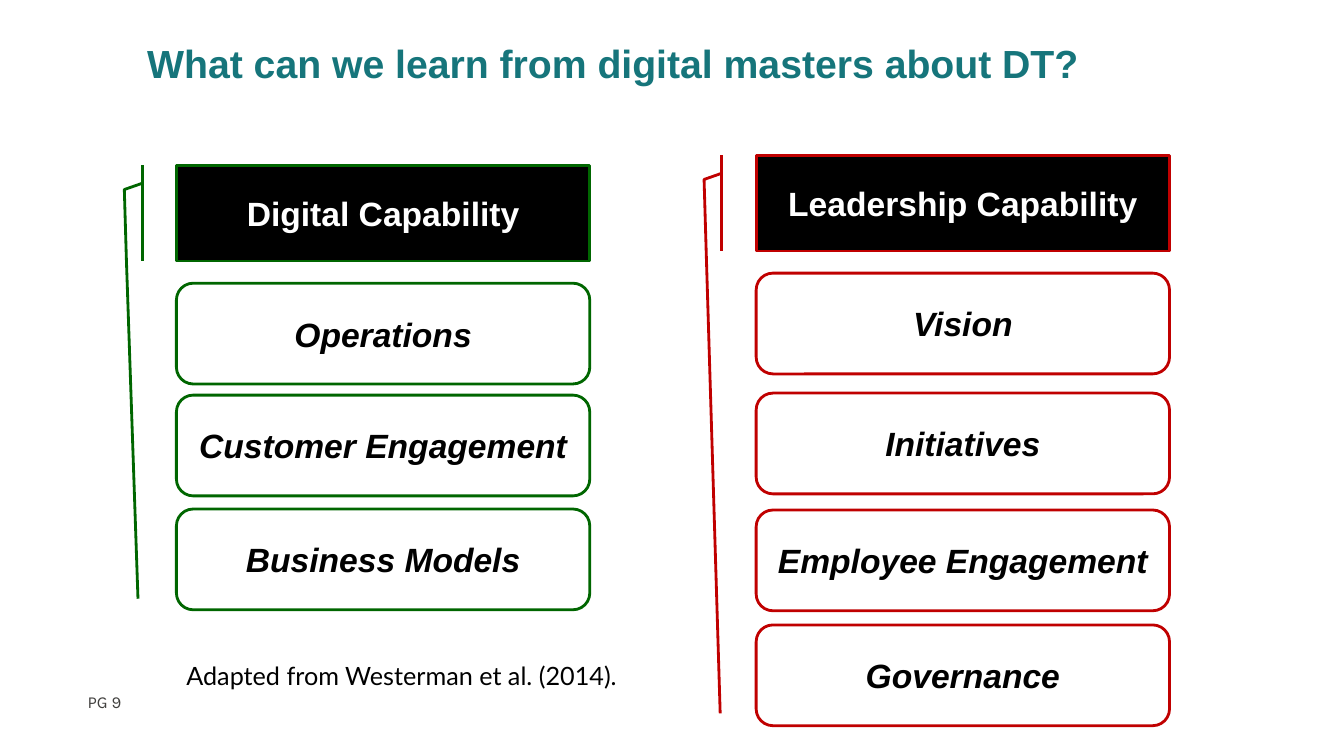
import pptx
import pptx.util
import pptx.dml.color
import pptx.enum.shapes
import pptx.enum.text

PX = 9144
COLOURS = {"teal": "16757B", "green": "006600", "red": "C00000",
           "black": "000000", "white": "FFFFFF", "grey": "41403E"}
SHAPES = pptx.enum.shapes.MSO_SHAPE
ALIGN = pptx.enum.text.PP_ALIGN
ANCHOR = pptx.enum.text.MSO_ANCHOR


def rgb(name):
    return pptx.dml.color.RGBColor.from_string(COLOURS[name])


def write(box, text, colour, align, anchor, formats):
    frame = box.text_frame
    frame.word_wrap = True
    frame.vertical_anchor = anchor
    para = frame.paragraphs[0]
    para.alignment = align
    span = para.add_run()
    span.text = text
    for name, value in formats.items():
        setattr(span.font, name, value)
    span.font.color.rgb = rgb(colour)


deck = pptx.Presentation()
deck.slide_width, deck.slide_height = 1333 * PX, 750 * PX
page = deck.slides.add_slide(deck.slide_layouts[5])

title = page.shapes.title
place = {"left": 136, "top": 34, "width": 1024, "height": 57}
for name, value in place.items():
    setattr(title, name, value * PX)
write(title, "What can we learn from digital masters about DT?", "teal",
      ALIGN.LEFT, ANCHOR.MIDDLE,
      {"name": "Arial", "size": pptx.util.Pt(28), "bold": True})

notes = [
    ("PG 9", "grey", "Karla", 12, (77, 681, 300, 40)),
    ("Adapted from Westerman et al. (2014).", "black", "Lato", 18, (175, 650, 458, 40)),
]
for text, colour, font, size, area in notes:
    box = page.shapes.add_textbox(*[value * PX for value in area])
    write(box, text, colour, ALIGN.LEFT, ANCHOR.TOP,
          {"name": font, "size": pptx.util.Pt(size)})

BENDS = [0.188, -0.083, 0.253, -0.126, 0.985, -0.121]
label = {"name": "Arial", "size": pptx.util.Pt(24), "bold": True}
columns = [
    ("Digital Capability", "green", 175, 164, [4.526, -0.093],
     [("Operations", 281), ("Customer Engagement", 392), ("Business Models", 505)]),
    ("Leadership Capability", "red", 750, 154, [5.829, -0.087],
     [("Vision", 271), ("Initiatives", 390), ("Employee Engagement", 506),
      ("Governance", 620)]),
]
for heading, colour, left, top, tail, items in columns:
    boxes = [(SHAPES.ROUNDED_RECTANGLE, text, item_top, 100, "black", True)
             for text, item_top in items]
    boxes.append((SHAPES.LINE_CALLOUT_3_BORDER_AND_ACCENT_BAR, heading, top, 95, "white", False))
    for kind, text, box_top, height, ink, italic in boxes:
        box = page.shapes.add_shape(kind, left * PX, box_top * PX, 410 * PX, height * PX)
        box.shadow.inherit = False
        box.line.color.rgb = rgb(colour)
        box.line.width = pptx.util.Pt(2)
        box.fill.background()
        write(box, text, ink, ALIGN.CENTER, ANCHOR.MIDDLE, {**label, "italic": italic})
    callout = box
    callout.fill.solid()
    callout.fill.fore_color.rgb = rgb("black")
    for index, bend in enumerate(BENDS + tail):
        callout.adjustments[index] = bend

deck.save("out.pptx")
